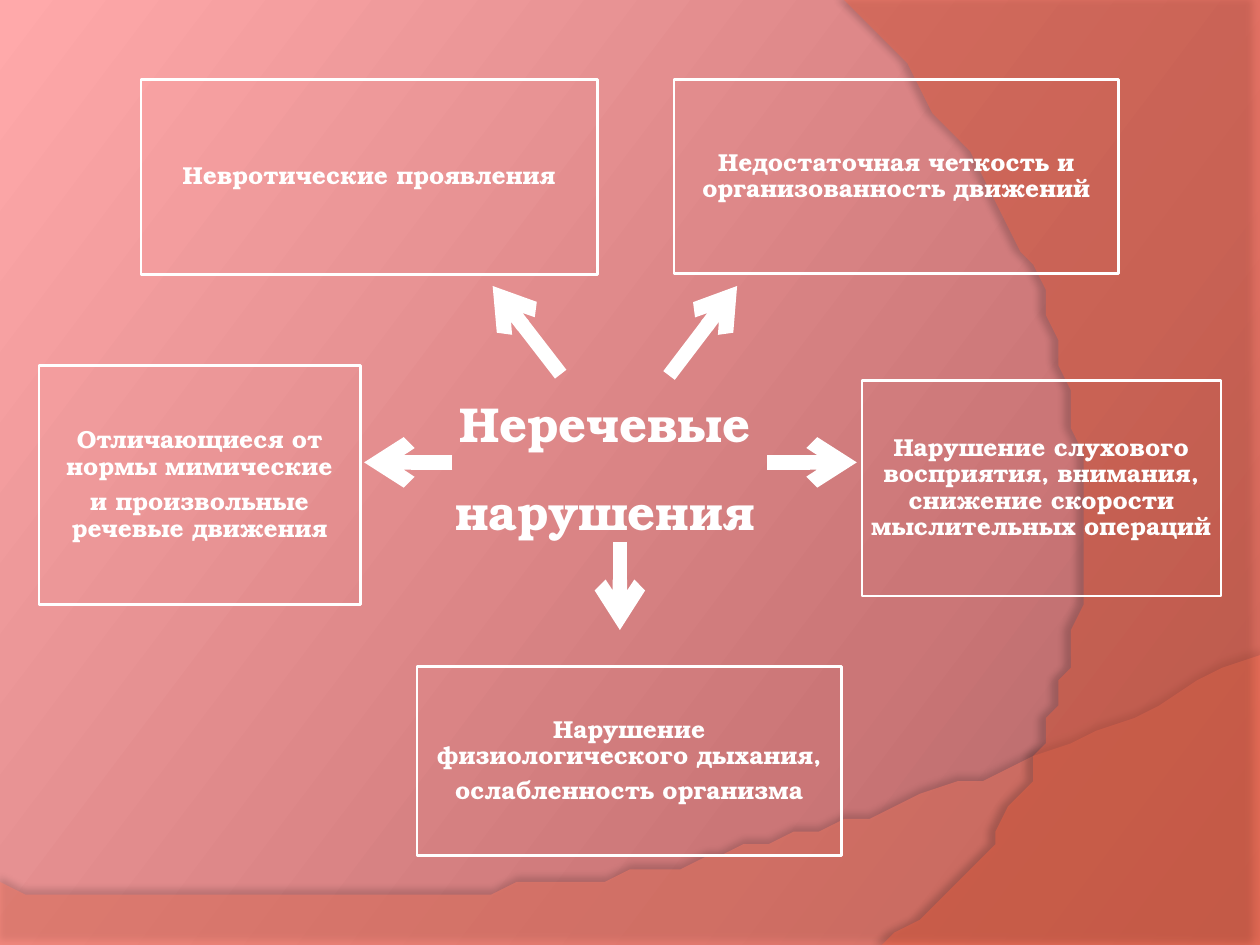
import copy

import pptx
import pptx.dml.color
import pptx.enum.dml
import pptx.enum.shapes
import pptx.enum.text
import pptx.oxml
import pptx.oxml.ns
import pptx.util

COLUMNS, ROWS = 100, 75
CELL = pptx.util.Inches(0.1)
FONT = "TeX Gyre Bonum"
WHITE = "FFFFFF"
NAMESPACE = pptx.oxml.ns.nsdecls("a")

CAUSES = [
    ((11.2, 6.3, 36.2, 15.5), ["Невротические проявления"]),
    ((53.5, 6.3, 35.3, 15.4), ["Недостаточная четкость и организованность движений"]),
    ((3.1, 29, 25.5, 19), ["Отличающиеся от нормы мимические",
                           "и произвольные речевые движения"]),
    ((68.4, 30.2, 28.5, 17.1), ["Нарушение слухового восприятия, внимания, "
                                "снижение скорости мыслительных операций"]),
    ((33.1, 52.9, 33.7, 15), ["Нарушение физиологического дыхания,",
                              "ослабленность организма"]),
]
ARROWS = [
    ((44.5, 29.7), (39.1, 22.7)),
    ((53.1, 29.8), (58.5, 22.7)),
    ((49.2, 43), (49.2, 50)),
    ((35.9, 36.7), (28.9, 36.7)),
    ((60.9, 36.7), (68, 36.7)),
]


def cells(*counts):
    """Turn grid counts into lengths."""
    return [int(count * CELL) for count in counts]


def colour(value):
    return pptx.dml.color.RGBColor.from_string(value)


def assign(target, values):
    for name, value in values.items():
        setattr(target, name, value)


def write(frame, lines, size, spacing, after=0):
    """Fill a text frame with centred bold white paragraphs."""
    for index, line in enumerate(lines):
        para = frame.paragraphs[0] if index == 0 else frame.add_paragraph()
        assign(para, {"alignment": pptx.enum.text.PP_ALIGN.CENTER,
                      "line_spacing": spacing,
                      "space_before": pptx.util.Pt(0),
                      "space_after": pptx.util.Pt(after)})
        span = para.add_run()
        span.text = line
        assign(span.font, {"name": FONT, "size": pptx.util.Pt(size), "bold": True})
        span.font.color.rgb = colour(WHITE)


def paint_background(page):
    fill = page.background.fill
    fill.gradient()
    fill.gradient_angle = 143
    stops = fill.gradient_stops
    first = stops[0]._gs
    first.addnext(copy.deepcopy(first))
    shades = [(0, "AA6364"), (0.3, "CB7677"), (1, "FFA9AA")]
    for stop, (position, shade) in zip(fill.gradient_stops, shades):
        stop.color.rgb = colour(shade)
        stop.position = position


def curve(start, pull, push, end, steps=48):
    """Points along a cubic curve."""
    points = []
    for step in range(steps + 1):
        t = step / steps
        weights = ((1 - t) ** 3, 3 * t * (1 - t) ** 2, 3 * t * t * (1 - t), t ** 3)
        points.append(tuple(
            sum(weight * value for weight, value in zip(weights, axis))
            for axis in zip(start, pull, push, end)))
    return points


def add_wave(page, points, fill, alpha, shadow):
    """Translucent outline; shadow is its opacity, distance and direction."""
    builder = page.shapes.build_freeform(*points[0], scale=CELL)
    builder.add_line_segments(points[1:], close=True)
    wave = builder.convert_to_shape()
    wave.fill.solid()
    wave.fill.fore_color.rgb = colour(fill)
    wave.line.fill.background()
    properties = wave._element.spPr
    shade = properties.find(".//" + pptx.oxml.ns.qn("a:srgbClr"))
    shade.append(pptx.oxml.parse_xml(f'<a:alpha {NAMESPACE} val="{alpha * 1000}"/>'))
    opacity, distance, direction = shadow
    properties.append(pptx.oxml.parse_xml(
        f'<a:effectLst {NAMESPACE}><a:outerShdw blurRad="{pptx.util.Pt(4)}" '
        f'dist="{pptx.util.Pt(distance)}" dir="{direction * 60000}" algn="ctr" '
        f'rotWithShape="0"><a:srgbClr val="000000"><a:alpha val="{opacity * 1000}"/>'
        '</a:srgbClr></a:outerShdw></a:effectLst>'))


def add_decoration(page):
    lower = curve((COLUMNS, 52), (55.9, 72.9), (39.1, 71.9), (0, 70.5))
    add_wave(page, [(0, ROWS), (COLUMNS, ROWS)] + lower, "FF7E66", 45, (35, 3.5, 270))
    right = curve((70.3, ROWS), (89.1, 61.9), (94.7, 27.5), (66.8, 0))
    add_wave(page, [(COLUMNS, 0.2), (COLUMNS, ROWS)] + right, "FF6542", 40, (45, 4, 180))


def add_cause(page, box, lines):
    card = page.shapes.add_shape(pptx.enum.shapes.MSO_SHAPE.RECTANGLE, *cells(*box))
    card.shadow.inherit = False
    card.fill.background()
    card.line.color.rgb = colour(WHITE)
    card.line.width = pptx.util.Pt(1.5)
    frame = card.text_frame
    assign(frame, {"word_wrap": True,
                   "vertical_anchor": pptx.enum.text.MSO_ANCHOR.MIDDLE})
    assign(frame, {f"margin_{side}": pptx.util.Inches(0.06)
                   for side in ("left", "top", "right", "bottom")})
    write(frame, lines, 14, 0.9, after=4.9)


def add_heading(page, box):
    title = page.shapes.title
    assign(title, dict(zip(("left", "top", "width", "height"), cells(*box))))
    frame = title.text_frame
    assign(frame, {"word_wrap": True,
                   "auto_size": pptx.enum.text.MSO_AUTO_SIZE.NONE,
                   "vertical_anchor": pptx.enum.text.MSO_ANCHOR.TOP,
                   "margin_top": 0, "margin_bottom": 0})
    write(frame, ["Неречевые", "нарушения"], 28, 1.5)


def add_arrow(page, start, end):
    arrow = page.shapes.add_connector(
        pptx.enum.shapes.MSO_CONNECTOR.STRAIGHT, *cells(*start, *end))
    arrow.line.color.rgb = colour(WHITE)
    arrow.line.width = pptx.util.Pt(8.25)
    arrow.line._get_or_add_ln().append(
        pptx.oxml.parse_xml(f'<a:tailEnd {NAMESPACE} type="arrow"/>'))
    arrow._element.spPr.append(pptx.oxml.parse_xml(f"<a:effectLst {NAMESPACE}/>"))


def main():
    deck = pptx.Presentation()
    deck.slide_width, deck.slide_height = cells(COLUMNS, ROWS)
    page = deck.slides.add_slide(deck.slide_layouts[5])
    paint_background(page)
    add_decoration(page)
    for box, lines in CAUSES:
        add_cause(page, box, lines)
    add_heading(page, (16, 28.9, 64, 30.3))
    for start, end in ARROWS:
        add_arrow(page, start, end)
    deck.save("out.pptx")


if __name__ == "__main__":
    main()
